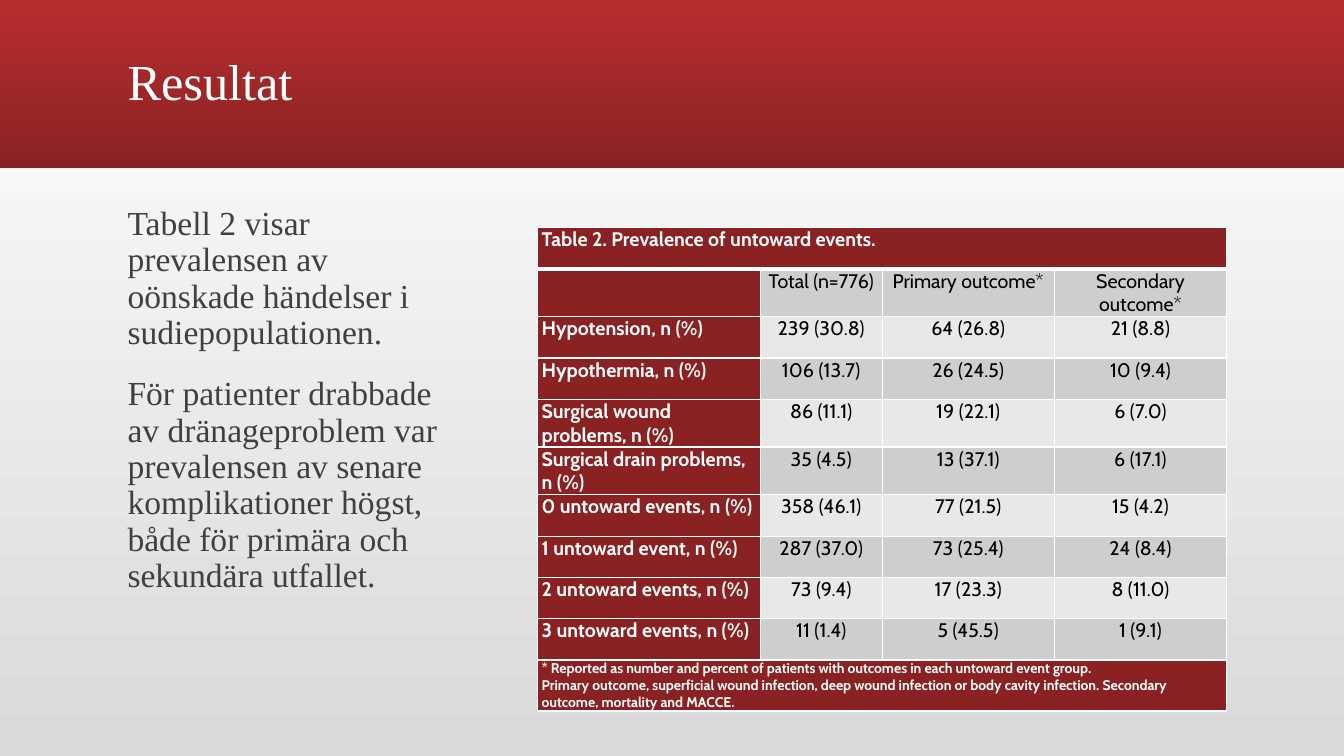
import dataclasses
import typing

import lxml.etree
import pptx
import pptx.dml.color
import pptx.enum.shapes
import pptx.enum.text
import pptx.oxml.ns
import pptx.presentation
import pptx.shapes.base
import pptx.slide
import pptx.table
import pptx.text.text
import pptx.util

Cm = pptx.util.Cm
Pt = pptx.util.Pt
ALIGN = pptx.enum.text.PP_ALIGN
ANCHOR = pptx.enum.text.MSO_ANCHOR


@dataclasses.dataclass(frozen=True)
class Theme:
    serif: str = "Times New Roman"
    sans: str = "Cabin"
    red: str = "8A2223"
    bright_red: str = "B82D2F"
    white: str = "FFFFFF"
    black: str = "000000"
    body_grey: str = "404040"
    background_grey: str = "D9D9D9"
    bands: tuple[str, str] = ("E8E8E8", "CECECE")
    title_size: int = 36
    body_size: int = 24
    table_size: int = 14
    note_size: int = 10


THEME = Theme()


@dataclasses.dataclass(frozen=True)
class Box:
    """A place on the slide, in centimetres."""
    left: float
    top: float
    width: float
    height: float


@dataclasses.dataclass(frozen=True)
class TextStyle:
    font: str
    size: int
    color: str
    bold: bool = False
    align: typing.Any = ALIGN.LEFT
    line_spacing: float = 1.0
    space_before: int = 0


class Event(typing.NamedTuple):
    name: str
    total: str
    primary: str
    secondary: str


BANNER_BOX = Box(0, 0, 33.87, 4.23)
TITLE_BOX = Box(2.96, 0.28, 27.94, 3.68)
BODY_BOX = Box(2.96, 5.08, 8.97, 12.7)
TABLE_BOX = Box(13.55, 5.74, 17.36, 11.44)
COLUMN_WIDTHS = (5.61, 3.07, 4.34, 4.34)

TITLE_STYLE = TextStyle(THEME.serif, THEME.title_size, THEME.white, line_spacing=0.9)
BODY_STYLE = TextStyle(THEME.serif, THEME.body_size, THEME.body_grey,
                       line_spacing=0.9, space_before=18)
LABEL_STYLE = TextStyle(THEME.sans, THEME.table_size, THEME.white, bold=True)
VALUE_STYLE = TextStyle(THEME.sans, THEME.table_size, THEME.black, align=ALIGN.CENTER)
NOTE_STYLE = dataclasses.replace(LABEL_STYLE, size=THEME.note_size)

BODY_TEXT = (
    "Tabell 2 visar prevalensen av oönskade händelser i sudiepopulationen.\n"
    "För patienter drabbade av dränageproblem var prevalensen av senare "
    "komplikationer högst, både för primära och sekundära utfallet."
)
TABLE_TITLE = "Table 2. Prevalence of untoward events."
TABLE_NOTE = (
    "* Reported as number and percent of patients with outcomes in each untoward event group.\n"
    "Primary outcome, superficial wound infection, deep wound infection or body cavity "
    "infection. Secondary outcome, mortality and MACCE."
)
EVENTS = (
    Event("", "Total (n=776)", "Primary outcome*", "Secondary outcome*"),
    Event("Hypotension, n (%)", "239 (30.8)", "64 (26.8)", "21 (8.8)"),
    Event("Hypothermia, n (%)", "106 (13.7)", "26 (24.5)", "10 (9.4)"),
    Event("Surgical wound problems, n (%)", "86 (11.1)", "19 (22.1)", "6 (7.0)"),
    Event("Surgical drain problems, n (%)", "35 (4.5)", "13 (37.1)", "6 (17.1)"),
    Event("0 untoward events, n (%)", "358 (46.1)", "77 (21.5)", "15 (4.2)"),
    Event("1 untoward event, n (%)", "287 (37.0)", "73 (25.4)", "24 (8.4)"),
    Event("2 untoward events, n (%)", "73 (9.4)", "17 (23.3)", "8 (11.0)"),
    Event("3 untoward events, n (%)", "11 (1.4)", "5 (45.5)", "1 (9.1)"),
)


def rgb(color: str) -> pptx.dml.color.RGBColor:
    return pptx.dml.color.RGBColor.from_string(color)


def set_attributes(target: typing.Any, values: dict[str, typing.Any]) -> None:
    for name, value in values.items():
        setattr(target, name, value)


def lengths(box: Box) -> dict[str, int]:
    return {name: Cm(value) for name, value in dataclasses.asdict(box).items()}


def fill_gradient(fill: typing.Any, colors: tuple[str, str], angle: int) -> None:
    fill.gradient()
    fill.gradient_angle = angle
    for position, (stop, color) in enumerate(zip(fill.gradient_stops, colors)):
        stop.position = position
        stop.color.rgb = rgb(color)


def write_text(frame: pptx.text.text.TextFrame, text: str, style: TextStyle) -> None:
    frame.text = text
    for index, paragraph in enumerate(frame.paragraphs):
        set_attributes(paragraph, {
            "alignment": style.align,
            "line_spacing": style.line_spacing,
            "space_before": Pt(style.space_before if index else 0),
        })
        for run in paragraph.runs:
            set_attributes(run.font, {
                "name": style.font, "size": Pt(style.size), "bold": style.bold,
            })
            run.font.color.rgb = rgb(style.color)


def fill_placeholder(shape: typing.Any, box: Box, text: str,
                     style: TextStyle, anchor: typing.Any) -> None:
    set_attributes(shape, lengths(box))
    frame = shape.text_frame
    write_text(frame, text, style)
    set_attributes(frame, {
        "word_wrap": True,
        "auto_size": pptx.enum.text.MSO_AUTO_SIZE.NONE,
        "vertical_anchor": anchor,
    })


def remove_bullets(frame: pptx.text.text.TextFrame) -> None:
    for paragraph in frame.paragraphs:
        properties = paragraph._p.get_or_add_pPr()
        properties.set("marL", "0")
        properties.set("indent", "0")
        lxml.etree.SubElement(properties, pptx.oxml.ns.qn("a:buNone"))


def add_banner(slide: pptx.slide.Slide) -> None:
    """Draw the red band behind the title."""
    banner = slide.shapes.add_shape(
        pptx.enum.shapes.MSO_SHAPE.RECTANGLE, **lengths(BANNER_BOX))
    banner.shadow.inherit = False
    banner.line.fill.background()
    fill_gradient(banner.fill, (THEME.bright_red, THEME.red), 270)
    slide.shapes.title.element.addprevious(banner.element)


def add_borders(cell: typing.Any, widths: dict[str, int]) -> None:
    properties = cell._tc.get_or_add_tcPr()
    for index, (side, width) in enumerate(widths.items()):
        line = lxml.etree.Element(pptx.oxml.ns.qn(f"a:ln{side}"), w=str(Pt(width)))
        fill = lxml.etree.SubElement(line, pptx.oxml.ns.qn("a:solidFill"))
        lxml.etree.SubElement(fill, pptx.oxml.ns.qn("a:srgbClr"), val=THEME.white)
        properties.insert(index, line)


def format_cell(table: pptx.table.Table, row: int, column: int,
                text: str, style: TextStyle, color: str) -> None:
    cell = table.cell(row, column)
    write_text(cell.text_frame, text, style)
    set_attributes(cell, {
        "margin_left": Cm(0.1), "margin_right": Cm(0.1),
        "margin_top": 0, "margin_bottom": 0, "vertical_anchor": ANCHOR.TOP,
    })
    cell.fill.solid()
    cell.fill.fore_color.rgb = rgb(color)
    add_borders(cell, {"L": 1, "R": 1, "T": 3 if row == 1 else 1, "B": 3 if row == 0 else 1})


def add_event_table(slide: pptx.slide.Slide) -> None:
    note_row = len(EVENTS) + 1
    table = slide.shapes.add_table(
        note_row + 1, len(COLUMN_WIDTHS), **lengths(TABLE_BOX)).table
    set_attributes(table, {"first_row": False, "horz_banding": False})
    for column, width in zip(table.columns, COLUMN_WIDTHS):
        column.width = Cm(width)
    for row, text, style in ((0, TABLE_TITLE, LABEL_STYLE), (note_row, TABLE_NOTE, NOTE_STYLE)):
        for column in range(len(COLUMN_WIDTHS)):
            format_cell(table, row, column, "" if column else text, style, THEME.red)
        table.cell(row, 0).merge(table.cell(row, len(COLUMN_WIDTHS) - 1))
    for row, event in enumerate(EVENTS, start=1):
        for column, text in enumerate(event):
            style, color = (VALUE_STYLE, THEME.bands[row % 2]) if column else (LABEL_STYLE, THEME.red)
            format_cell(table, row, column, text, style, color)


def main() -> None:
    presentation = pptx.Presentation()
    set_attributes(presentation, {"slide_width": Cm(33.87), "slide_height": Cm(19.05)})
    slide = presentation.slides.add_slide(presentation.slide_layouts[1])
    fill_gradient(slide.background.fill, (THEME.background_grey, THEME.white), 90)
    add_banner(slide)
    fill_placeholder(slide.shapes.title, TITLE_BOX, "Resultat", TITLE_STYLE, ANCHOR.MIDDLE)
    body = slide.placeholders[1]
    fill_placeholder(body, BODY_BOX, BODY_TEXT, BODY_STYLE, ANCHOR.TOP)
    remove_bullets(body.text_frame)
    add_event_table(slide)
    presentation.save("out.pptx")


if __name__ == "__main__":
    main()
